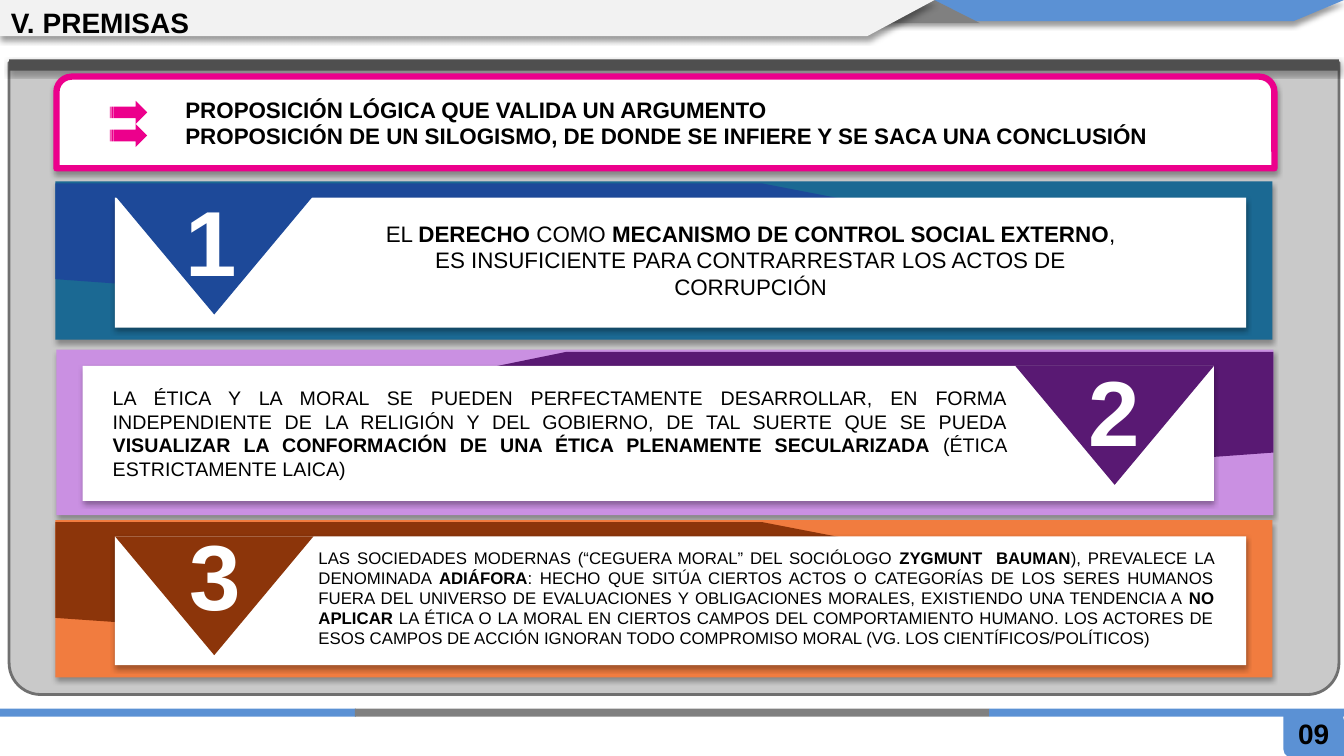
from dataclasses import dataclass

from lxml import etree
from pptx import Presentation, util as u
from pptx.dml.color import RGBColor
from pptx.enum import shapes, text
from pptx.oxml.ns import qn

PX = 9144
KIND = shapes.MSO_SHAPE
ALIGN = text.PP_ALIGN


@dataclass(frozen=True)
class Theme:
    font: str = "Arial"
    black: str = "000000"
    white: str = "FFFFFF"
    blue: str = "5B91D4"
    gray: str = "808080"
    title_bar: str = "F2F2F2"
    panel: str = "C9C9C9"
    panel_edge: str = "707070"
    panel_cap: str = "4F4F4F"
    pink: str = "EC008C"
    heading: int = 20
    number: int = 66
    large: int = 16
    medium: int = 14
    small: int = 12


THEME = Theme()
BAR_SHADOW = (40, 4, 3)
CARD_SHADOW = (32, 3.5, 2.2)
MIRROR_SUM = 1318

CARDS = [
    {"number": "1", "number_at": (174, 178), "top": 180, "height": 157,
     "back": "1B6993", "accent": "1D4999", "mirrored": False,
     "body_at": (358, 213, 773, 91), "size": THEME.large, "align": ALIGN.CENTER,
     "body": "EL *DERECHO* COMO *MECANISMO DE CONTROL SOCIAL EXTERNO*, ES "
             "INSUFICIENTE PARA CONTRARRESTAR LOS ACTOS DE CORRUPCIÓN"},
    {"number": "2", "number_at": (1070, 346), "top": 347, "height": 164,
     "back": "CA90E2", "accent": "591973", "mirrored": True,
     "body_at": (102, 378, 906, 104), "size": THEME.medium, "align": ALIGN.JUSTIFY,
     "body": "LA ÉTICA Y LA MORAL SE PUEDEN PERFECTAMENTE DESARROLLAR, EN FORMA "
             "INDEPENDIENTE DE LA RELIGIÓN Y DEL GOBIERNO, DE TAL SUERTE QUE SE PUEDA "
             "*VISUALIZAR LA CONFORMACIÓN DE UNA ÉTICA PLENAMENTE SECULARIZADA *"
             "(ÉTICA ESTRICTAMENTE LAICA)"},
    {"number": "3", "number_at": (178, 509), "top": 516, "height": 156,
     "back": "F17C3F", "accent": "8C350A", "mirrored": False,
     "body_at": (306, 538, 908, 111), "size": THEME.small, "align": ALIGN.JUSTIFY,
     "body": "LAS SOCIEDADES MODERNAS (“CEGUERA MORAL” DEL SOCIÓLOGO *ZYGMUNT  BAUMAN*), "
             "PREVALECE LA DENOMINADA *ADIÁFORA*: HECHO QUE SITÚA CIERTOS ACTOS O "
             "CATEGORÍAS DE LOS SERES HUMANOS FUERA DEL UNIVERSO DE EVALUACIONES Y "
             "OBLIGACIONES MORALES, EXISTIENDO UNA TENDENCIA A *NO APLICAR *LA ÉTICA O LA "
             "MORAL EN CIERTOS CAMPOS DEL COMPORTAMIENTO HUMANO. LOS ACTORES DE ESOS CAMPOS "
             "DE ACCIÓN IGNORAN TODO COMPROMISO MORAL (VG. LOS CIENTÍFICOS/POLÍTICOS)"},
]


def set_values(target, values):
    for name, value in values.items():
        setattr(target, name, value)


def paint(shape, fill, line=None, shadow=None):
    shape.fill.solid()
    shape.fill.fore_color.rgb = RGBColor.from_string(fill)
    if line:
        color, width = line
        shape.line.color.rgb = RGBColor.from_string(color)
        shape.line.width = u.Pt(width)
    else:
        shape.line.fill.background()
    shape.shadow.inherit = False
    if shadow:
        opacity, blur, distance = shadow
        effects = shape._element.spPr.find(qn("a:effectLst"))
        outer = etree.SubElement(effects, qn("a:outerShdw"), blurRad=str(u.Pt(blur)),
                                 dist=str(u.Pt(distance)), dir="5400000",
                                 algn="t", rotWithShape="0")
        color = etree.SubElement(outer, qn("a:srgbClr"), val=THEME.black)
        etree.SubElement(color, qn("a:alpha"), val=str(opacity * 1000))


def add_preset(parent, kind, box, fill, line=None, shadow=None, adjust=(), rotation=0):
    shape = parent.shapes.add_shape(kind, *(length * PX for length in box))
    for index, value in enumerate(adjust):
        shape.adjustments[index] = value
    shape.rotation = rotation
    paint(shape, fill, line, shadow)


def add_outline(parent, points, fill, shadow=None):
    builder = parent.shapes.build_freeform(*points[0], scale=PX)
    builder.add_line_segments(points[1:], close=True)
    paint(builder.convert_to_shape(), fill, shadow=shadow)


def add_text(slide, box, paragraphs, size, color=THEME.black, align=ALIGN.LEFT,
             wrap=True, anchor=text.MSO_ANCHOR.TOP):
    frame = slide.shapes.add_textbox(*(length * PX for length in box)).text_frame
    set_values(frame, {"word_wrap": wrap, "vertical_anchor": anchor,
                       "auto_size": text.MSO_AUTO_SIZE.SHAPE_TO_FIT_TEXT})
    for index, content in enumerate(paragraphs):
        paragraph = frame.add_paragraph() if index else frame.paragraphs[0]
        paragraph.alignment = align
        for position, part in enumerate(content.split("*")):
            if part:
                run = paragraph.add_run()
                run.text = part
                set_values(run.font, {"name": THEME.font, "size": u.Pt(size),
                                      "bold": position % 2 == 1})
                run.font.color.rgb = RGBColor.from_string(color)


def add_header(slide):
    header = slide.shapes.add_group_shape()
    add_outline(header, [(630, 0), (1333, 0), (1283, 21), (630, 21)],
                THEME.blue, BAR_SHADOW)
    add_preset(header, KIND.ISOSCELES_TRIANGLE, (881, 0, 91, 23), THEME.gray)
    add_outline(header, [(0, 0), (927, 0), (860, 36), (0, 36)],
                THEME.title_bar, BAR_SHADOW)
    add_text(slide, (1, 0, 1013, 44), ["*V. PREMISAS*"], THEME.heading,
             anchor=text.MSO_ANCHOR.MIDDLE)


def add_footer(slide):
    footer = slide.shapes.add_group_shape()
    add_preset(footer, KIND.ROUND_2_DIAG_RECTANGLE, (1273, 707, 60, 44), THEME.blue,
               adjust=(0, 0.17))
    for left, width, color in ((0, 353, THEME.blue), (352, 629, THEME.gray),
                               (981, 353, THEME.blue)):
        add_preset(footer, KIND.RECTANGLE, (left, 703, width, 8), color)
    add_text(slide, (1273, 706, 60, 44), ["*09*"], THEME.heading, align=ALIGN.CENTER)


def add_panel(slide):
    add_preset(slide, KIND.ROUND_2_SAME_RECTANGLE, (9, 62, 1319, 627), THEME.panel,
               line=(THEME.panel_edge, 2), adjust=(0.05, 0), rotation=180)
    add_preset(slide, KIND.RECTANGLE, (9, 59, 1319, 11), THEME.panel_cap,
               shadow=CARD_SHADOW)


def add_definition(slide):
    add_preset(slide, KIND.ROUND_2_SAME_RECTANGLE, (56, 76, 1208, 91), THEME.white,
               line=(THEME.pink, 4.5), shadow=CARD_SHADOW)
    add_text(slide, (174, 90, 1018, 64),
             ["*PROPOSICIÓN LÓGICA QUE VALIDA UN ARGUMENTO*",
              "*PROPOSICIÓN DE UN SILOGISMO, DE DONDE SE INFIERE Y SE SACA UNA CONCLUSIÓN*"],
             THEME.large)
    for row in range(2):
        add_preset(slide, KIND.STRIPED_RIGHT_ARROW, (109, 100 + 23 * row, 37, 23),
                   THEME.pink)


def add_card(slide, index, card):
    top, height, accent = card["top"], card["height"], card["accent"]

    def place(left, width=0):
        return MIRROR_SUM - left - width if card["mirrored"] else left

    def level(share):
        return top + round(share * height)

    group = slide.shapes.add_group_shape()
    add_preset(group, KIND.RECTANGLE, (place(55, 1207), top, 1207, height),
               card["back"], shadow=CARD_SHADOW)
    corners = [(344, 0.75), (55, 0.62), (55, 0.01), (756, 0.01), (947, 0.25), (346, 0.25)]
    add_outline(group, [(place(x), level(share)) for x, share in corners], accent)
    add_preset(group, KIND.RECTANGLE,
               (place(114, 1122), level(0.1), 1122, round(0.82 * height)),
               THEME.white, shadow=CARD_SHADOW)
    add_preset(group, KIND.ISOSCELES_TRIANGLE,
               (place(114, 197), 194 + 169 * index, 197, 118), accent, rotation=180)
    add_text(slide, (*card["number_at"], 72, 121), [f"*{card['number']}*"],
             THEME.number, THEME.white, wrap=False)
    add_text(slide, card["body_at"], [card["body"]], card["size"], align=card["align"])


def main():
    presentation = Presentation()
    set_values(presentation, {"slide_width": 1333 * PX, "slide_height": 750 * PX})
    slide = presentation.slides.add_slide(presentation.slide_layouts[6])
    add_header(slide)
    add_footer(slide)
    add_panel(slide)
    for index, card in enumerate(CARDS):
        add_card(slide, index, card)
    add_definition(slide)
    presentation.save("out.pptx")


if __name__ == "__main__":
    main()
